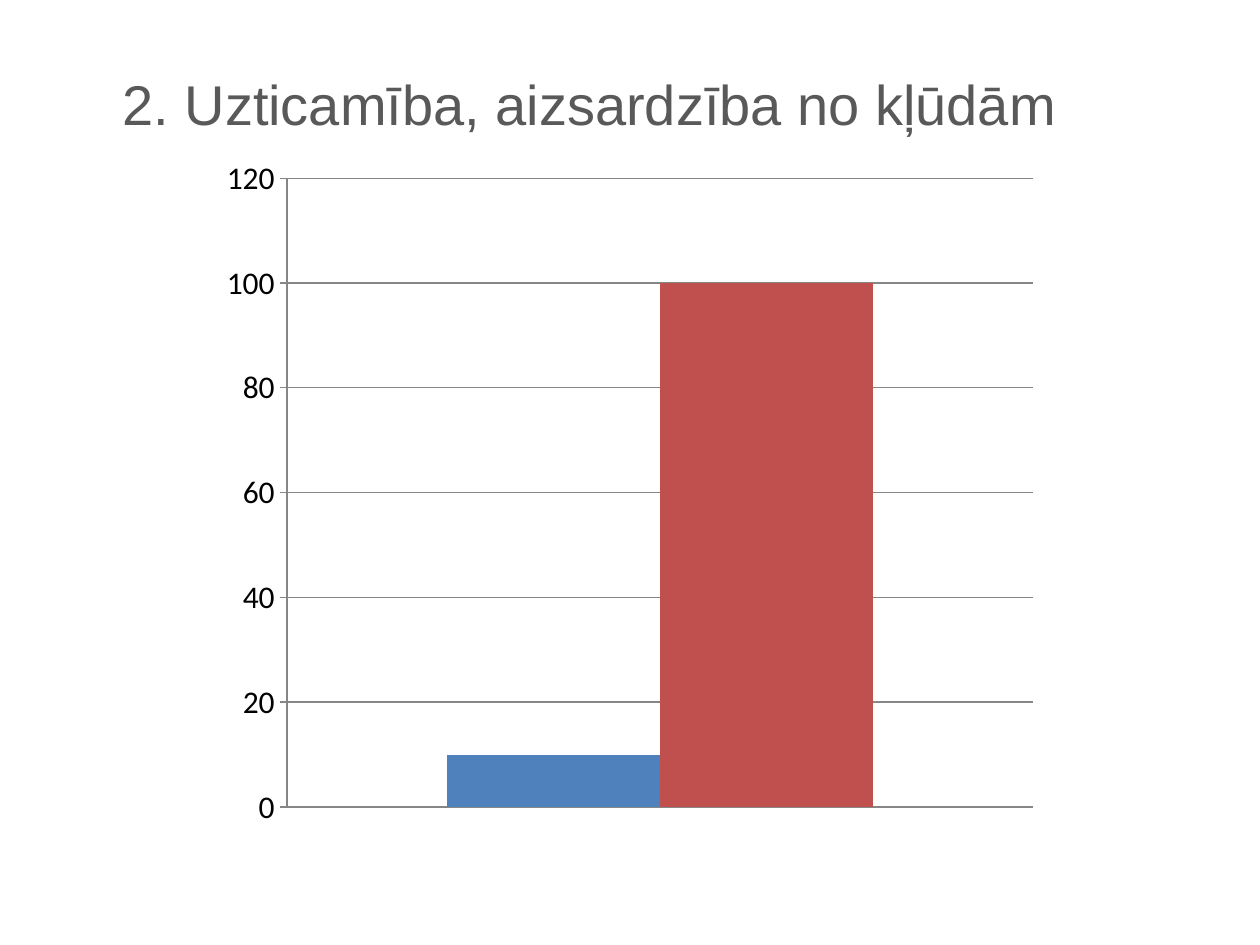
import pptx
import pptx.util
import pptx.dml.color
import pptx.chart.data
import pptx.enum.chart
import pptx.enum.text

Pt = pptx.util.Pt
RGB = pptx.dml.color.RGBColor
XL = pptx.enum.chart

BLACK = RGB(0x00, 0x00, 0x00)
GREY = RGB(0x59, 0x59, 0x59)
LINE = RGB(0x86, 0x86, 0x86)
BLUE = RGB(0x4F, 0x81, 0xBD)
RED = RGB(0xC0, 0x50, 0x4D)


class Deck:
    """Holds the style and the current slide."""

    head_font, head_size = "Arial", Pt(32)
    chart_font, chart_size = "Calibri", Pt(18)

    def __init__(self, wide, high):
        self.prs = pptx.Presentation()
        self.prs.slide_width, self.prs.slide_height = Pt(wide), Pt(high)
        self.slide = self.prs.slides.add_slide(self.prs.slide_layouts[6])

    def head(self, text, *box):
        frame = self.slide.shapes.add_textbox(*map(Pt, box)).text_frame
        frame.word_wrap = True
        frame.vertical_anchor = pptx.enum.text.MSO_ANCHOR.TOP
        frame.margin_left, frame.margin_top = Pt(34), Pt(8)
        frame.text = text
        font = frame.paragraphs[0].runs[0].font
        font.name, font.size = self.head_font, self.head_size
        font.color.rgb = GREY

    def bars(self, cats, rows, *box):
        data = pptx.chart.data.CategoryChartData()
        data.categories = cats
        for name, vals, _ in rows:
            data.add_series(name, vals)
        chart = self.slide.shapes.add_chart(
            XL.XL_CHART_TYPE.COLUMN_CLUSTERED, *map(Pt, box), data).chart
        chart.has_legend = chart.has_title = False
        chart.font.name, chart.font.size = self.chart_font, self.chart_size
        chart.font.color.rgb = BLACK

        # Columns
        plot = chart.plots[0]
        plot.gap_width, plot.overlap = 150, 0
        plot.vary_by_categories = False
        for item, (_, _, color) in zip(plot.series, rows):
            item.format.fill.solid()
            item.format.fill.fore_color.rgb = color

        # Axes
        chart.category_axis.visible = False
        axis = chart.value_axis
        axis.minimum_scale, axis.maximum_scale, axis.major_unit = 0, 120, 20
        axis.major_tick_mark = XL.XL_TICK_MARK.OUTSIDE
        axis.has_major_gridlines = True
        for part in (axis, axis.major_gridlines):
            part.format.line.color.rgb = LINE
            part.format.line.width = Pt(0.75)

    def save(self):
        self.prs.save("out.pptx")


def main():
    deck = Deck(720, 540)
    # Title
    deck.head("2. Uzticamība, aizsardzība no kļūdām", 36, 31.7, 648, 451)
    # Chart
    rows = [("Series 1", [10], BLUE), ("Series 2", [100], RED)]
    deck.bars(["1"], rows, 120, 83, 480, 397)
    deck.save()


if __name__ == "__main__":
    main()
